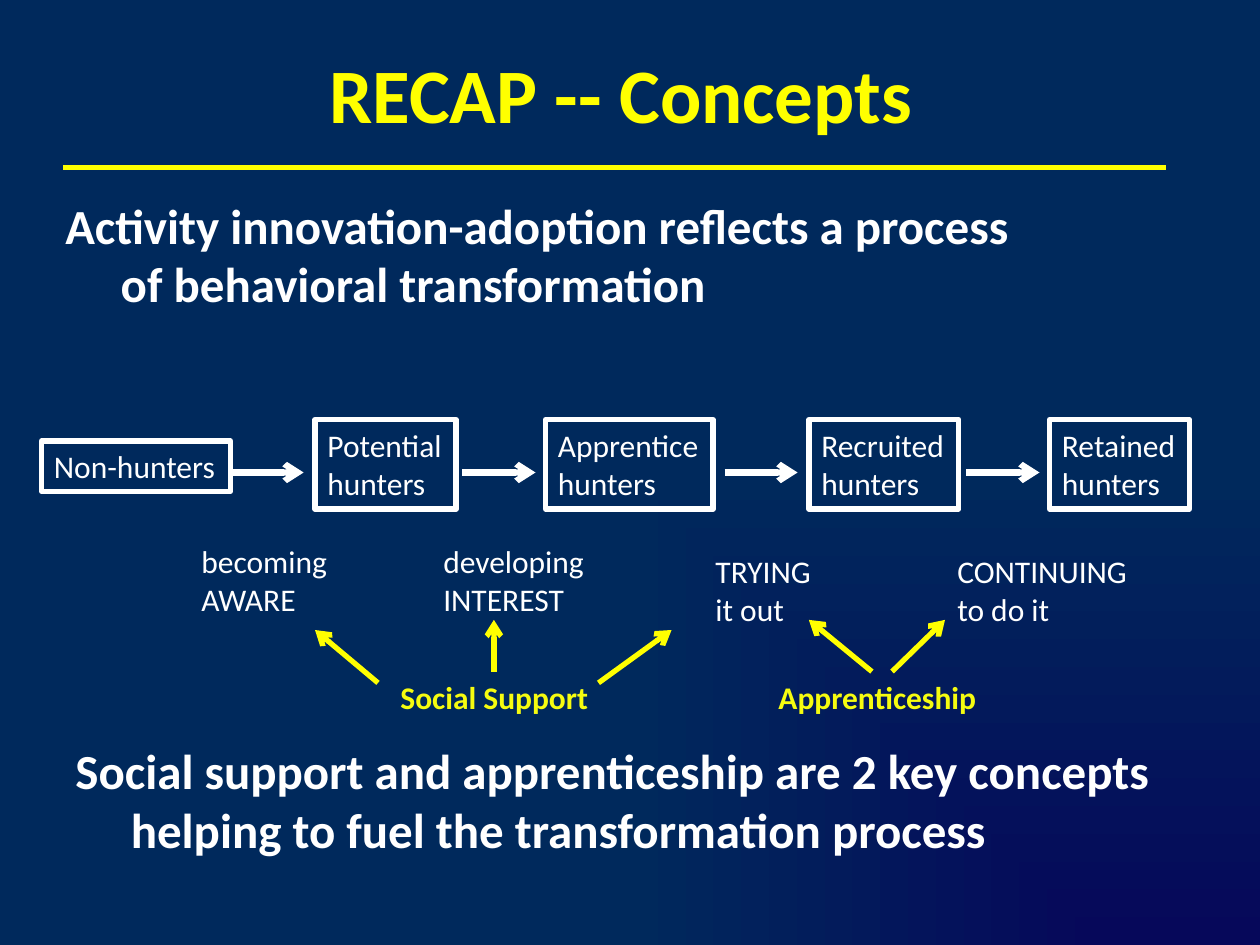
from dataclasses import dataclass

from lxml.etree import SubElement
from pptx import Presentation
from pptx.dml.color import RGBColor
from pptx.enum.shapes import MSO_CONNECTOR as Connector, MSO_SHAPE as Shape
from pptx.enum.text import MSO_ANCHOR as Anchor, MSO_AUTO_SIZE as AutoSize, PP_ALIGN as Align
from pptx.oxml.ns import qn
from pptx.util import Inches, Pt


@dataclass(frozen=True)
class Theme:
    font: str = "Calibri"
    white: str = "FFFFFF"
    yellow: str = "FFFF00"
    label_yellow: str = "F6FC10"
    glow: str = "06085A"
    navy: str = "00295C"
    title_size: int = 44
    statement_size: int = 28
    label_size: int = 18
    line_width: float = 3
    step_arrow_width: float = 3.5


@dataclass(frozen=True)
class TextBlock:
    left: float
    top: float
    width: float
    height: float
    lines: tuple[str, ...]


@dataclass(frozen=True)
class Line:
    start: tuple[float, float]
    end: tuple[float, float]


THEME = Theme()
TWO_LINES, ONE_LINE = 0.71, 0.4
STAGE_TOP, STEP_Y, STEP_LENGTH = 3.33, 3.75, 0.58
HANGING_INDENT = 0.44

STAGES = [
    TextBlock(0.33, 3.5, 1.5, ONE_LINE, ("Non-hunters",)),
    *(
        TextBlock(left, STAGE_TOP, width, TWO_LINES, (name, "hunters"))
        for left, width, name in [
            (2.5, 1.12, "Potential"),
            (4.33, 1.33, "Apprentice"),
            (6.42, 1.19, "Recruited"),
            (8.33, 1.11, "Retained"),
        ]
    ),
]
STEPS = [Line((x, STEP_Y), (x + STEP_LENGTH, STEP_Y)) for x in (1.83, 3.67, 5.75, 7.67)]
TRANSITIONS = [
    TextBlock(1.5, 4.25, 1.21, TWO_LINES, ("becoming", "AWARE")),
    TextBlock(3.42, 4.25, 1.33, TWO_LINES, ("developing", "INTEREST")),
    TextBlock(5.58, 4.33, 0.97, TWO_LINES, ("TRYING", "it out")),
    TextBlock(7.5, 4.33, 1.56, TWO_LINES, ("CONTINUING", "to do it")),
]
DRIVERS = [
    TextBlock(3.08, 5.33, 1.7, ONE_LINE, ("Social Support",)),
    TextBlock(6.08, 5.33, 1.78, ONE_LINE, ("Apprenticeship",)),
]
DRIVER_ARROWS = [
    Line((3, 5.42), (2.5, 5)),
    Line((3.92, 5.33), (3.92, 4.92)),
    Line((4.75, 5.42), (5.33, 5)),
    Line((6.92, 5.33), (6.42, 4.92)),
    Line((7.08, 5.33), (7.5, 4.92)),
]
OPENING = TextBlock(0.42, 1.5, 7.87, 1.04, (
    "Activity innovation-adoption reflects a process",
    "of behavioral transformation",
))
CLOSING = TextBlock(0.5, 5.83, 9.08, 1.04, (
    "Social support and apprenticeship are 2 key concepts",
    "helping to fuel the transformation process",
))


def rgb(color: str) -> RGBColor:
    return RGBColor.from_string(color)


def write_text(frame, lines, *, size=THEME.label_size, color=THEME.white,
               bold=False, align=Align.LEFT, indent=0.0) -> None:
    """Write one paragraph per line, indenting every line after the first."""
    for index, line in enumerate(lines):
        paragraph = frame.add_paragraph() if index else frame.paragraphs[0]
        paragraph.alignment = align
        if index and indent:
            paragraph._p.get_or_add_pPr().set("marL", str(Inches(indent)))
        run = paragraph.add_run()
        run.text = line
        run.font.name = THEME.font
        run.font.size = Pt(size)
        run.font.bold = bold
        run.font.color.rgb = rgb(color)


def add_text(slide, block: TextBlock, *, boxed=False, wrap=False, **text_format) -> None:
    bounds = [Inches(n) for n in (block.left, block.top, block.width, block.height)]
    if boxed:
        shape = slide.shapes.add_shape(Shape.RECTANGLE, *bounds)
        shape.shadow.inherit = False
        shape.fill.background()
        shape.line.color.rgb = rgb(THEME.white)
        shape.line.width = Pt(THEME.line_width)
    else:
        shape = slide.shapes.add_textbox(*bounds)
    frame = shape.text_frame
    frame.word_wrap = wrap
    frame.auto_size = AutoSize.SHAPE_TO_FIT_TEXT
    frame.vertical_anchor = Anchor.TOP
    write_text(frame, block.lines, **text_format)


def add_line(slide, line: Line, *, color=THEME.yellow, width=THEME.line_width,
             arrow=True) -> None:
    connector = slide.shapes.add_connector(
        Connector.STRAIGHT, *(Inches(n) for n in line.start + line.end))
    connector.line.color.rgb = rgb(color)
    connector.line.width = Pt(width)
    if arrow:
        SubElement(connector.line._get_or_add_ln(), qn("a:tailEnd"), type="arrow")
    SubElement(connector._element.spPr, qn("a:effectLst"))


def paint_background(slide) -> None:
    """Fill with a rectangular gradient that centres on the bottom right corner."""
    fill = slide.background.fill
    fill.gradient()
    for stop, color in zip(fill.gradient_stops, (THEME.glow, THEME.navy)):
        stop.color.rgb = rgb(color)
    gradient = slide.element.find(".//" + qn("a:gradFill"))
    gradient.remove(gradient.find(qn("a:lin")))
    focus = SubElement(gradient, qn("a:path"), attrib={"path": "rect"})
    SubElement(focus, qn("a:fillToRect"), l="100000", t="100000")


def add_title(slide, text: str) -> None:
    title = slide.shapes.title
    title.left, title.top = Inches(0.5), Inches(0.3)
    title.width, title.height = Inches(9), Inches(0.87)
    title.text_frame.vertical_anchor = Anchor.MIDDLE
    write_text(title.text_frame, [text], size=THEME.title_size,
               color=THEME.yellow, bold=True, align=Align.CENTER)


def main() -> None:
    presentation = Presentation()
    presentation.slide_width, presentation.slide_height = Inches(10), Inches(7.5)
    slide = presentation.slides.add_slide(presentation.slide_layouts[5])
    paint_background(slide)
    add_title(slide, "RECAP -- Concepts ")
    add_line(slide, Line((0.5, 1.33), (9.25, 1.33)), arrow=False)

    for stage in STAGES:
        add_text(slide, stage, boxed=True)
    for step in STEPS:
        add_line(slide, step, color=THEME.white, width=THEME.step_arrow_width)
    for transition in TRANSITIONS:
        add_text(slide, transition)
    for driver in DRIVERS:
        add_text(slide, driver, color=THEME.label_yellow, bold=True)
    for arrow in DRIVER_ARROWS:
        add_line(slide, arrow)
    for statement, wrap in ((OPENING, False), (CLOSING, True)):
        add_text(slide, statement, wrap=wrap, size=THEME.statement_size,
                 bold=True, indent=HANGING_INDENT)

    presentation.save("out.pptx")


if __name__ == "__main__":
    main()
